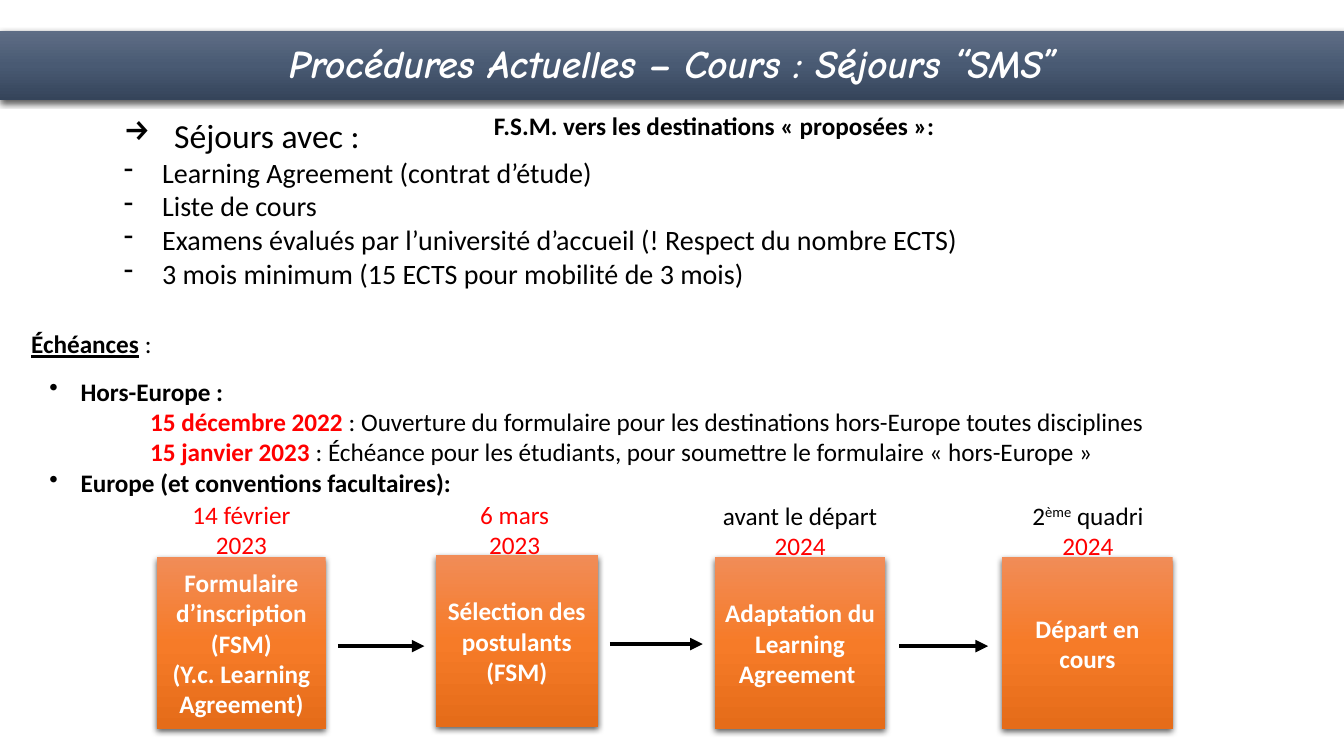
from dataclasses import dataclass

import lxml.etree
import pptx
import pptx.dml.color
import pptx.enum.shapes
import pptx.enum.text
import pptx.oxml
import pptx.oxml.ns
import pptx.util
from pptx.util import Inches

ALIGN = pptx.enum.text.PP_ALIGN
ANCHOR = pptx.enum.text.MSO_ANCHOR
qn = pptx.oxml.ns.qn


@dataclass(frozen=True)
class Theme:
    body_font: str = "Calibri"
    title_font: str = "Comic Neue"
    black: str = "000000"
    white: str = "FFFFFF"
    red: str = "FF0000"
    slate: tuple = ("5E6D85", "495A73", "35445A")
    orange: tuple = ("F18C57", "F67B28", "E56C19")
    title: int = 28
    lead: int = 24
    list: int = 20
    body: int = 18
    arrow: int = 3


THEME = Theme()


def set_font(font, size=THEME.body, color=THEME.black, bold=False,
             italic=False, name=THEME.body_font):
    font.name = name
    font.size = pptx.util.Pt(size)
    font.bold = bold
    font.italic = italic
    font.color.rgb = pptx.dml.color.RGBColor.from_string(color)


def add_paragraph(frame, spans, align=ALIGN.LEFT, bullet=None, indent=0,
                  spacing=None, **style):
    """Each span is a text or a (text, changes) pair; 'baseline' and 'underline' are changes too."""
    para = frame.paragraphs[0]
    if para.runs:
        para = frame.add_paragraph()
    para.alignment = align
    if spacing:
        para.line_spacing = spacing
    set_font(para.font, **style)
    for text, changes in [(s, {}) if isinstance(s, str) else s for s in spans]:
        span = para.add_run()
        span.text = text
        changes = dict(changes)
        baseline = changes.pop("baseline", None)
        underline = changes.pop("underline", None)
        if changes:
            set_font(span.font, **{**style, **changes})
        if underline:
            span.font.underline = True
        if baseline:
            span.font._element.set("baseline", str(baseline * 1000))
    properties = para._p.get_or_add_pPr()
    if indent:
        properties.set("marL", str(Inches(indent)))
    if bullet:
        properties.set("indent", str(-Inches(indent)))
        mark = lxml.etree.Element(qn("a:buChar"), char=bullet)
        properties.find(qn("a:defRPr")).addprevious(mark)


def add_text(page, left, top, width, height):
    box = page.shapes.add_textbox(Inches(left), Inches(top), Inches(width), Inches(height))
    box.text_frame.word_wrap = True
    return box.text_frame


def add_panel(page, left, top, width, height, colors):
    """Rectangle with a vertical three-colour gradient and a soft shadow below."""
    panel = page.shapes.add_shape(pptx.enum.shapes.MSO_SHAPE.RECTANGLE, Inches(left),
                                  Inches(top), Inches(width), Inches(height))
    panel.line.fill.background()
    stops = "".join(f'<a:gs pos="{place * 50000}"><a:srgbClr val="{color}"/></a:gs>'
                    for place, color in enumerate(colors))
    namespace = pptx.oxml.ns.nsdecls("a")
    gradient = pptx.oxml.parse_xml(
        f'<a:gradFill {namespace} rotWithShape="1"><a:gsLst>{stops}</a:gsLst>'
        '<a:lin ang="5400000" scaled="0"/></a:gradFill>')
    shadow = pptx.oxml.parse_xml(
        f'<a:effectLst {namespace}><a:outerShdw blurRad="57150" dist="19050" dir="5400000" '
        'algn="ctr" rotWithShape="0"><a:srgbClr val="000000"><a:alpha val="63000"/>'
        '</a:srgbClr></a:outerShdw></a:effectLst>')
    properties = panel._element.spPr
    properties.find(qn("a:prstGeom")).addnext(gradient)
    properties.find(qn("a:ln")).addnext(shadow)
    panel.text_frame.word_wrap = True
    return panel.text_frame


def add_arrow(page, start, end, height):
    arrow = page.shapes.add_connector(pptx.enum.shapes.MSO_CONNECTOR.STRAIGHT, Inches(start),
                                      Inches(height), Inches(end), Inches(height))
    arrow.line.width = pptx.util.Pt(THEME.arrow)
    arrow.line.color.rgb = pptx.dml.color.RGBColor.from_string(THEME.black)
    lxml.etree.SubElement(arrow.line._get_or_add_ln(), qn("a:tailEnd"), type="triangle")
    lxml.etree.SubElement(arrow._element.spPr, qn("a:effectLst"))


def add_title(page):
    frame = add_panel(page, 0, 0.31, 13.33, 0.68, THEME.slate)
    frame.margin_left = frame.margin_right = Inches(0.24)
    frame.margin_top = frame.margin_bottom = Inches(0.12)
    frame.vertical_anchor = ANCHOR.TOP
    add_paragraph(frame, ["Procédures Actuelles – Cours : Séjours “SMS”"], ALIGN.CENTER,
                  spacing=0.93, size=THEME.title, color=THEME.white, bold=True,
                  italic=True, name=THEME.title_font)


def add_conditions(page):
    frame = add_text(page, 1.13, 1.09, 9.66, 1.85)
    add_paragraph(frame, ["Séjours avec :"], bullet="→", indent=0.5, size=THEME.lead)
    for condition in ("Learning Agreement (contrat d’étude)",
                      "Liste de cours",
                      "Examens évalués par l’université d’accueil (! Respect du nombre ECTS)",
                      "3 mois minimum (15 ECTS pour mobilité de 3 mois)"):
        add_paragraph(frame, [condition], bullet="-", indent=0.38, size=THEME.list)
    frame = add_text(page, 4.8, 1.1, 6.73, 0.35)
    add_paragraph(frame, ["F.S.M. vers les destinations « proposées »:"], spacing=0.8, bold=True)


def add_deadlines(page):
    frame = add_text(page, 0.21, 3.21, 1.42, 0.4)
    add_paragraph(frame, [("Échéances", {"bold": True, "underline": True}), " :"])

    frame = add_text(page, 0.39, 3.68, 12.75, 1.01)
    add_paragraph(frame, ["Hors-Europe :"], bullet="•", indent=0.31, bold=True)
    for date, event in (
            ("15 décembre 2022",
             "Ouverture du formulaire pour les destinations hors-Europe toutes disciplines"),
            ("15 janvier 2023",
             "Échéance pour les étudiants, pour soumettre le formulaire « hors-Europe »")):
        add_paragraph(frame, [(date, {"color": THEME.red, "bold": True}), f" : {event}"], indent=1)

    frame = add_text(page, 0.39, 4.59, 4.61, 0.4)
    add_paragraph(frame, ["Europe (et conventions facultaires):"], bullet="•", indent=0.31,
                  bold=True)


def add_step(page, left, top, width, lines):
    frame = add_panel(page, left, top, width, 1.7, THEME.orange)
    frame.vertical_anchor = ANCHOR.MIDDLE
    for line in lines:
        add_paragraph(frame, [line], ALIGN.CENTER, color=THEME.white, bold=True)


def add_date(page, left, top, width, lines):
    frame = add_text(page, left, top, width, 0.71)
    for spans in lines:
        add_paragraph(frame, spans, ALIGN.CENTER)


def add_timeline(page):
    red = {"color": THEME.red}
    for step in (
            (1.56, 5.53, 1.67, ["Formulaire d’inscription (FSM)", "(Y.c. Learning Agreement)"]),
            (4.32, 5.51, 1.61, ["Sélection des postulants (FSM)"]),
            (7.09, 5.53, 1.69, ["Adaptation du Learning Agreement "]),
            (9.94, 5.53, 1.69, ["Départ en cours"])):
        add_step(page, *step)
    for date in (
            (1.71, 4.9, 1.37, [[("14 février 2023", red)]]),
            (4.42, 4.9, 1.37, [[("6 mars", red)], [("2023", red)]]),
            (6.84, 4.91, 2.19, [["avant le départ ", ("2024", red)]]),
            (10.11, 4.91, 1.36, [["2", ("ème", {"baseline": 30}), " quadri"], [("2024", red)]])):
        add_date(page, *date)
    for arrow in ((3.35, 4.21, 6.41), (6.05, 6.97, 6.39), (8.92, 9.8, 6.41)):
        add_arrow(page, *arrow)


def main():
    deck = pptx.Presentation()
    deck.slide_width, deck.slide_height = Inches(13.33), Inches(7.5)
    page = deck.slides.add_slide(deck.slide_layouts[6])
    add_title(page)
    add_conditions(page)
    add_deadlines(page)
    add_timeline(page)
    deck.save("out.pptx")


if __name__ == "__main__":
    main()
